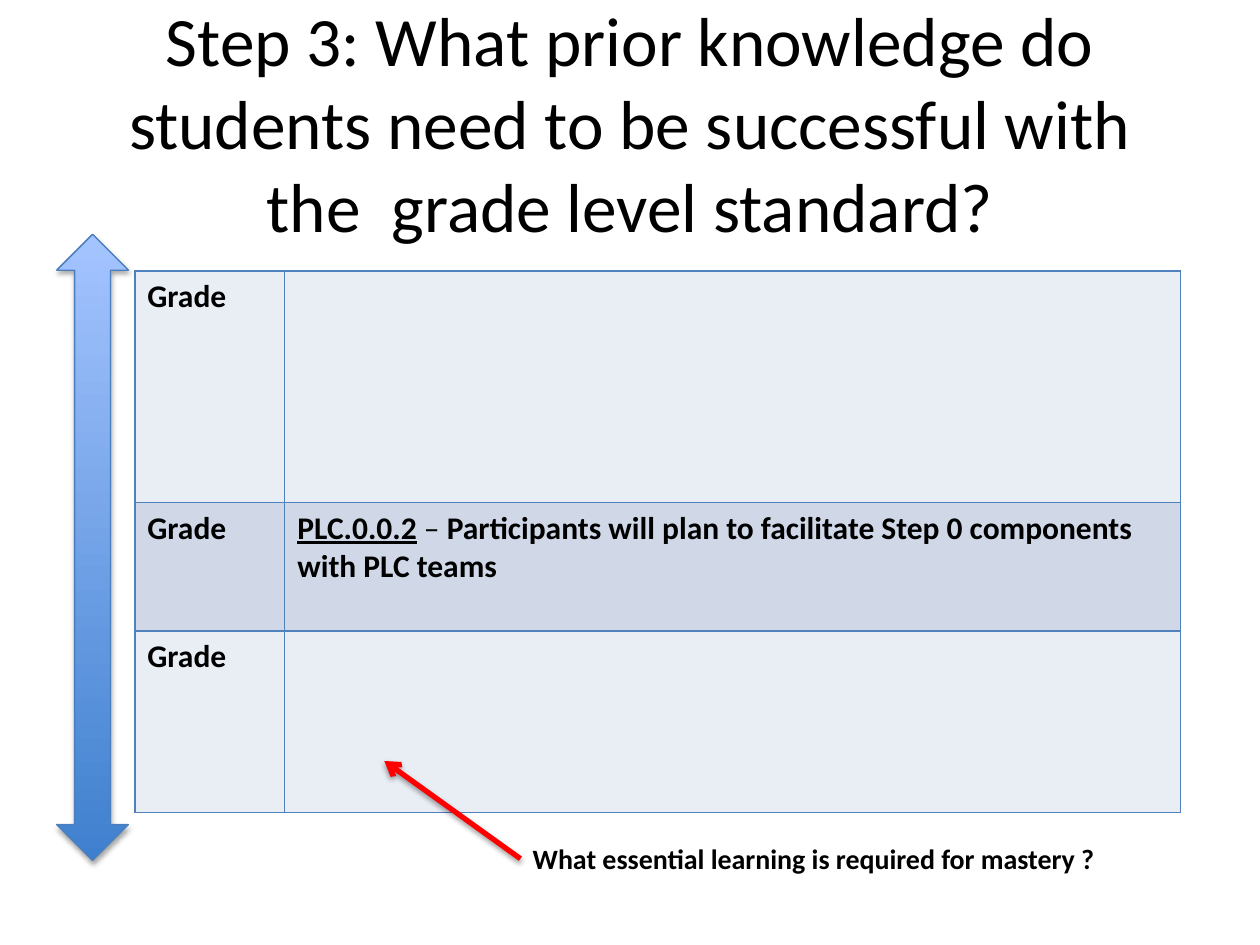
import dataclasses

import lxml.etree
import pptx
import pptx.dml.color
import pptx.enum.shapes
import pptx.enum.text
import pptx.oxml.ns
import pptx.util

COLORS = {
    "text": "000000",
    "border": "4F81BD",
    "light row": "E9EDF4",
    "dark row": "D0D8E8",
    "arrow low": "3F80CE",
    "arrow high": "A4C4FF",
    "arrow line": "4B7EBC",
    "pointer": "FF0000",
    "shadow": "000000",
}
FONT = "Calibri"
COLUMNS, ROWS = 100, 75  # grid units across and down the page
UNIT = pptx.util.Inches(0.1)


@dataclasses.dataclass
class Box:
    """A region in grid columns and rows."""
    left: float
    top: float
    width: float
    height: float

    def lengths(self):
        return [grid(n) for n in (self.left, self.top, self.width, self.height)]


def grid(count):
    return pptx.util.Emu(round(count * UNIT))


def rgb(name):
    return pptx.dml.color.RGBColor.from_string(COLORS[name])


def add_child(parent, tag, **attributes):
    child = lxml.etree.SubElement(parent, pptx.oxml.ns.qn(tag))
    for name, value in attributes.items():
        child.set(name, str(value))
    return child


def add_span(para, text, size=18, bold=True, underline=False):
    span = para.add_run()
    span.text = text
    span.font.name = FONT
    span.font.size = pptx.util.Pt(size)
    span.font.bold = bold
    span.font.underline = underline
    span.font.color.rgb = rgb("text")


def add_shadow(shape, opacity, blur, distance):
    """Cast a shadow straight down; lengths are in points."""
    effects = add_child(shape._element.spPr, "a:effectLst")
    shadow = add_child(effects, "a:outerShdw", blurRad=pptx.util.Pt(blur),
                       dist=pptx.util.Pt(distance), dir=90 * 60000, rotWithShape=0)
    color = add_child(shadow, "a:srgbClr", val=COLORS["shadow"])
    add_child(color, "a:alpha", val=opacity * 1000)


def add_title(page, box):
    frame = page.shapes.add_textbox(*box.lengths()).text_frame
    frame.word_wrap = True
    frame.vertical_anchor = pptx.enum.text.MSO_ANCHOR.MIDDLE
    para = frame.paragraphs[0]
    para.alignment = pptx.enum.text.PP_ALIGN.CENTER
    add_span(para, "Step 3: What prior knowledge do students need to be "
             "successful with the  grade level standard?", size=39.6, bold=False)


def set_borders(cell):
    properties = cell._tc.get_or_add_tcPr()
    for index, side in enumerate(("a:lnL", "a:lnR", "a:lnT", "a:lnB")):
        line = add_child(properties, side, w=pptx.util.Pt(1))
        add_child(add_child(line, "a:solidFill"), "a:srgbClr", val=COLORS["border"])
        properties.insert(index, line)


def add_grade_table(page, box):
    standard = [
        ("PLC.0.0.2", {"underline": True}),
        (" – ", {"bold": False}),
        ("Participants will plan to facilitate Step 0 components with PLC teams", {}),
    ]
    rows = [  # height, fill, spans of the second column
        (18.4, "light row", []),
        (10.2, "dark row", standard),
        (14.4, "light row", []),
    ]
    table = page.shapes.add_table(len(rows), 2, *box.lengths()).table
    label_width = 11.9
    table.columns[0].width = grid(label_width)
    table.columns[1].width = grid(box.width - label_width)
    for row, (height, fill, spans) in zip(table.rows, rows):
        row.height = grid(height)
        for cell, content in zip(row.cells, ([("Grade", {})], spans)):
            cell.fill.solid()
            cell.fill.fore_color.rgb = rgb(fill)
            set_borders(cell)
            for text, style in content:
                add_span(cell.text_frame.paragraphs[0], text, **style)


def add_grade_arrow(page, box):
    arrow = page.shapes.add_shape(
        pptx.enum.shapes.MSO_SHAPE.UP_DOWN_ARROW, *box.lengths())
    arrow.fill.gradient()
    arrow.fill.gradient_angle = 90
    for stop, name in zip(arrow.fill.gradient_stops, ("arrow low", "arrow high")):
        stop.color.rgb = rgb(name)
    arrow.line.color.rgb = rgb("arrow line")
    arrow.line.width = pptx.util.Pt(0.75)
    add_shadow(arrow, opacity=35, blur=3.1, distance=1.8)


def add_callout(page, box):
    """Place a question at the lower right, pointing to the box's top left corner."""
    indent, drop = 10.8, 5.9
    area = Box(box.left + indent, box.top + drop, box.width - indent, box.height - drop)
    question = page.shapes.add_textbox(*area.lengths())
    frame = question.text_frame
    frame.word_wrap = True
    frame.auto_size = pptx.enum.text.MSO_AUTO_SIZE.SHAPE_TO_FIT_TEXT
    add_span(frame.paragraphs[0], "What essential learning is required for mastery ?", size=16)

    tip = grid(box.left), grid(box.top)
    pointer = page.shapes.add_connector(
        pptx.enum.shapes.MSO_CONNECTOR.STRAIGHT, question.left, question.top, *tip)
    pointer.begin_connect(question, 1)
    pointer.line.color.rgb = rgb("pointer")
    pointer.line.width = pptx.util.Pt(3)
    add_child(pointer.line._get_or_add_ln(), "a:tailEnd", type="arrow")
    add_shadow(pointer, opacity=38, blur=3.1, distance=1.6)


def main():
    deck = pptx.Presentation()
    deck.slide_width, deck.slide_height = grid(COLUMNS), grid(ROWS)
    page = deck.slides.add_slide(deck.slide_layouts[6])
    add_title(page, Box(5, 3.4, 90, 12.5))
    add_grade_table(page, Box(10.7, 21.5, 83, 43))
    add_grade_arrow(page, Box(4.5, 18.6, 5.7, 49.7))
    add_callout(page, Box(30.5, 60.4, 63.1, 9.6))
    deck.save("out.pptx")


if __name__ == "__main__":
    main()
